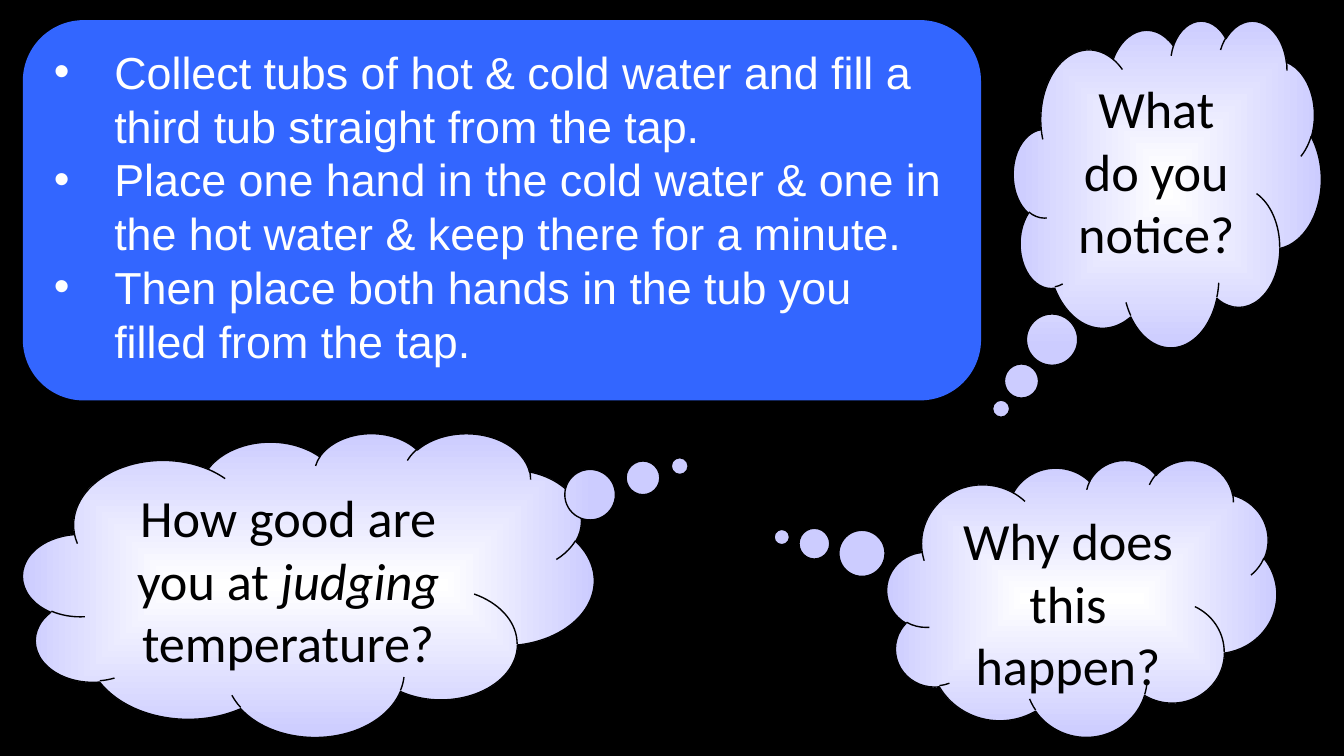
from typing import NamedTuple

from lxml.etree import SubElement
from pptx import Presentation
from pptx.dml.color import RGBColor
from pptx.enum.shapes import MSO_SHAPE
from pptx.enum.text import MSO_ANCHOR, PP_ALIGN
from pptx.oxml.ns import qn
from pptx.util import Inches, Pt

BLACK = RGBColor(0x00, 0x00, 0x00)
WHITE = RGBColor(0xFF, 0xFF, 0xFF)
BLUE = RGBColor(0x33, 0x66, 0xFF)
LILAC = RGBColor(0xCC, 0xCC, 0xFF)

# Wide 16:9 page on a square grid, 100 columns across
WIDE = Inches(10)
HIGH = WIDE * 9 // 16
CELL = WIDE // 100
HANG = Inches(0.45)


class Box(NamedTuple):
    col: float
    row: float
    cols: float
    rows: float


class Run(NamedTuple):
    text: str
    slant: bool = False


class Cloud(NamedTuple):
    box: Box
    tail: tuple[float, float]
    runs: list[Run]


PANEL = Box(1.7, 1.5, 71.3, 28.3)
STEPS = [
    "Collect tubs of hot & cold water and fill a third tub straight from the tap.",
    "Place one hand in the cold water & one in the hot water & keep there for a minute.",
    "Then place both hands in the tub you filled from the tap.",
]
CLOUDS = [
    Cloud(Box(1.7, 32.2, 42.5, 22.6), (0.65, -0.39),
          [Run("How good are you at "), Run("judging", True), Run(" temperature?")]),
    Cloud(Box(75.4, 1.5, 22.9, 24.3), (-0.54, 0.69), [Run("What do you notice?")]),
    Cloud(Box(66, 34.2, 29, 20.6), (-0.77, -0.22), [Run("Why does this happen?")]),
]


def add_box(slide, kind: MSO_SHAPE, box: Box, adjs: tuple):
    shape = slide.shapes.add_shape(kind, *(round(n * CELL) for n in box))
    shape.shadow.inherit = False
    for i, adj in enumerate(adjs):
        shape.adjustments[i] = adj
    shape.text_frame.word_wrap = True
    shape.text_frame.vertical_anchor = MSO_ANCHOR.TOP
    return shape


def add_run(para, run: Run, face: str, size: int, color: RGBColor) -> None:
    part = para.add_run()
    part.text = run.text
    part.font.name = face
    part.font.size = Pt(size)
    part.font.italic = run.slant
    part.font.color.rgb = color


def add_dot(para) -> None:
    props = para._p.get_or_add_pPr()
    props.set("marL", str(HANG))
    props.set("indent", str(-HANG))
    SubElement(props, qn("a:buFont"), typeface="Arial")
    SubElement(props, qn("a:buChar"), char="•")


def glow(shape) -> None:
    """Fill from a white centre out to lilac edges."""
    shape.fill.gradient()
    for stop, pos, color in zip(shape.fill.gradient_stops, (0, 1), (WHITE, LILAC)):
        stop.position = pos
        stop.color.rgb = color
    grad = shape._element.spPr.find(qn("a:gradFill"))
    grad.remove(grad.find(qn("a:lin")))
    way = SubElement(grad, qn("a:path"), path="rect")
    SubElement(way, qn("a:fillToRect"), l="50000", t="50000", r="50000", b="50000")


def add_panel(slide, box: Box, steps: list[str]) -> None:
    shape = add_box(slide, MSO_SHAPE.ROUNDED_RECTANGLE, box, (0.16,))
    shape.fill.solid()
    shape.fill.fore_color.rgb = BLUE
    shape.line.fill.background()
    frame = shape.text_frame
    for i, step in enumerate(steps):
        para = frame.add_paragraph() if i else frame.paragraphs[0]
        para.alignment = PP_ALIGN.LEFT
        add_dot(para)
        add_run(para, Run(step), "Arial", 24, WHITE)


def add_cloud(slide, cloud: Cloud) -> None:
    shape = add_box(slide, MSO_SHAPE.CLOUD_CALLOUT, cloud.box, cloud.tail)
    glow(shape)
    shape.line.color.rgb = BLACK
    shape.line.width = Pt(0.75)
    para = shape.text_frame.paragraphs[0]
    para.alignment = PP_ALIGN.CENTER
    for run in cloud.runs:
        add_run(para, run, "Calibri", 28, BLACK)


def main() -> None:
    deck = Presentation()
    deck.slide_width, deck.slide_height = WIDE, HIGH
    slide = deck.slides.add_slide(deck.slide_layouts[6])

    # Backdrop
    slide.background.fill.solid()
    slide.background.fill.fore_color.rgb = BLACK

    # Steps, then the questions around them
    add_panel(slide, PANEL, STEPS)
    for cloud in CLOUDS:
        add_cloud(slide, cloud)

    deck.save("out.pptx")


if __name__ == "__main__":
    main()
